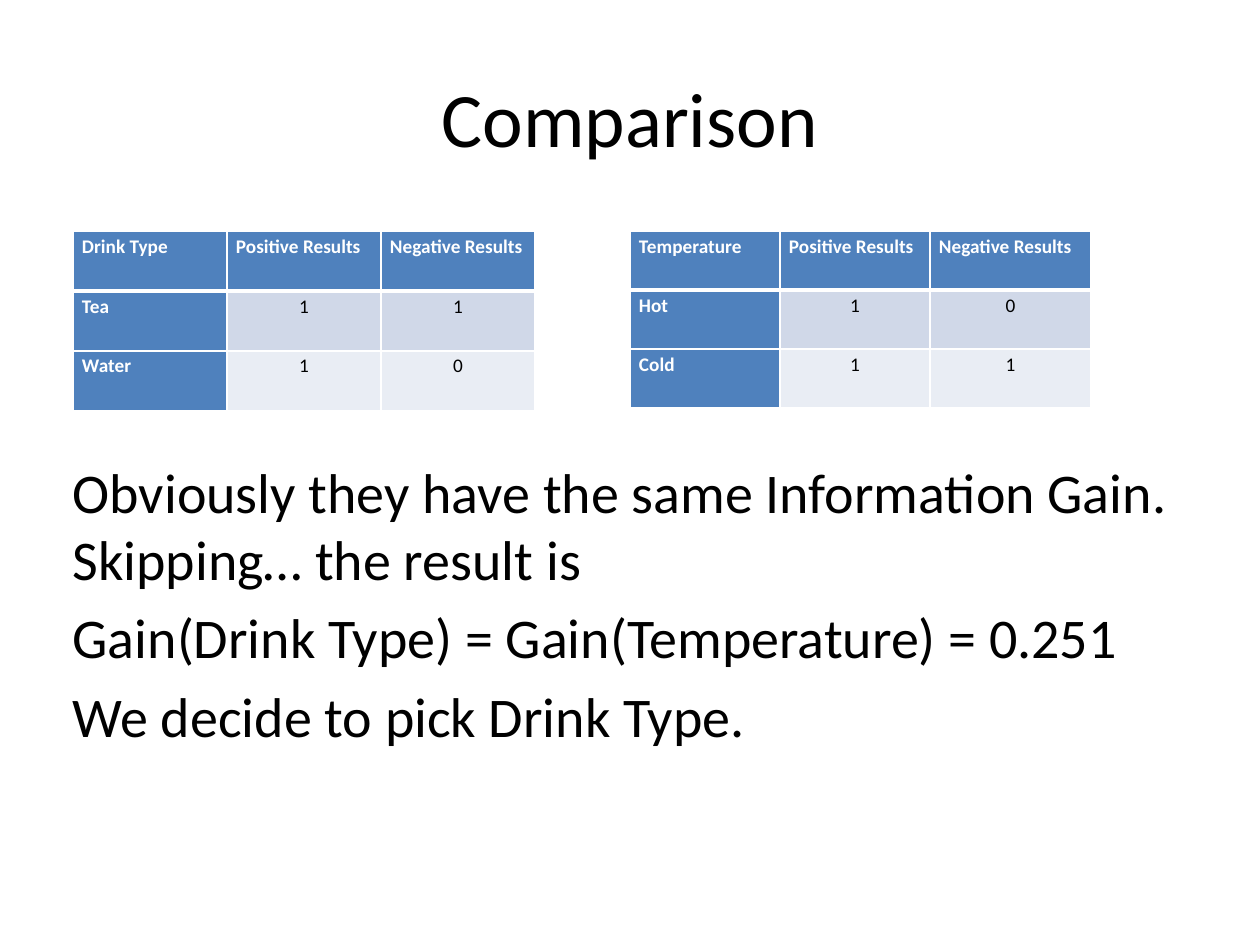
from dataclasses import dataclass

from lxml.etree import SubElement
from pptx import Presentation
from pptx.dml.color import RGBColor
from pptx.enum.text import MSO_ANCHOR, PP_ALIGN
from pptx.oxml import parse_xml
from pptx.oxml.ns import nsdecls, qn
from pptx.util import Emu, Pt

PX_PER_INCH = 126
WHITE, BLACK, BLUE = "FFFFFF", "000000", "4F81BD"
BAND_FILLS = ("D0D8E8", "E9EDF4")


@dataclass(frozen=True)
class ResultTable:
    left: int
    column_widths: tuple[int, ...]
    row_height: int
    attribute: str
    results: tuple[tuple[str, str, str], ...]


TABLES = (
    ResultTable(73, (154, 154, 154), 60, "Drink Type",
                (("Tea", "1", "1"), ("Water", "1", "0"))),
    ResultTable(630, (150, 150, 161), 59, "Temperature",
                (("Hot", "1", "0"), ("Cold", "1", "1"))),
)
TABLE_TOP = 231
BODY_LINES = (
    "Obviously they have the same Information Gain. Skipping… the result is",
    "Gain(Drink Type) = Gain(Temperature) = 0.251",
    "We decide to pick Drink Type.",
)


def px(length: int) -> Emu:
    """Turn pixels into EMU."""
    return Emu(round(length * 914400 / PX_PER_INCH))


def color(value: str) -> RGBColor:
    """Turn a hex string into a colour."""
    return RGBColor.from_string(value)


def write(para, text: str, *, size: int, fill: str = BLACK, bold: bool = False,
          align=PP_ALIGN.LEFT, spacing: float | None = None) -> None:
    """Write formatted text into a paragraph."""
    para.alignment = align
    if spacing is not None:
        para.line_spacing = spacing
    span = para.add_run()
    span.text = text
    span.font.name = "Calibri"
    span.font.size = Pt(size)
    span.font.bold = bold
    span.font.color.rgb = color(fill)


def place(shape, left: int, top: int, width: int, height: int) -> None:
    """Move and size a shape."""
    shape.left, shape.top = px(left), px(top)
    shape.width, shape.height = px(width), px(height)


def set_borders(cell, top: int, bottom: int) -> None:
    """Draw white borders around a cell, with widths in points."""
    properties = cell._tc.get_or_add_tcPr()
    sides = {"L": 1, "R": 1, "T": top, "B": bottom}
    for position, (side, width) in enumerate(sides.items()):
        line = parse_xml(f'<a:ln{side} {nsdecls("a")} w="{Pt(width)}"/>')
        fill = SubElement(line, qn("a:solidFill"))
        SubElement(fill, qn("a:srgbClr"), val=WHITE)
        properties.insert(position, line)


def draw_cell(cell, text: str, row: int, column: int) -> None:
    """Fill and format one cell by its place in the table."""
    heading = row == 0 or column == 0
    cell.margin_left = cell.margin_right = px(9)
    cell.margin_top = cell.margin_bottom = 0
    cell.fill.solid()
    cell.fill.fore_color.rgb = color(BLUE if heading else BAND_FILLS[row - 1])
    set_borders(cell, top=3 if row == 1 else 1, bottom=3 if row == 0 else 1)
    write(cell.text_frame.paragraphs[0], text, size=11, bold=heading,
          fill=WHITE if heading else BLACK, spacing=1.15,
          align=PP_ALIGN.LEFT if heading else PP_ALIGN.CENTER)


def draw_table(page, data: ResultTable) -> None:
    """Draw one table of results."""
    rows = ((data.attribute, "Positive Results", "Negative Results"), *data.results)
    frame = page.shapes.add_table(
        len(rows), len(data.column_widths), px(data.left), px(TABLE_TOP),
        px(sum(data.column_widths)), px(data.row_height * len(rows)))
    table = frame.table
    table.first_col = True
    for column, width in zip(table.columns, data.column_widths):
        column.width = px(width)
    for row, texts in enumerate(rows):
        for column, text in enumerate(texts):
            draw_cell(table.cell(row, column), text, row, column)


def draw_body(box) -> None:
    """Write the body lines without bullets."""
    place(box, 60, 451, 1134, 441)
    frame = box.text_frame
    for index, text in enumerate(BODY_LINES):
        para = frame.add_paragraph() if index else frame.paragraphs[0]
        write(para, text, size=32)
        properties = para._p.get_or_add_pPr()
        properties.set("marL", "0")
        properties.set("indent", "0")
        SubElement(properties, qn("a:buNone"))


def main() -> None:
    """Build and save the slide."""
    deck = Presentation()
    deck.slide_width, deck.slide_height = px(1260), px(945)
    page = deck.slides.add_slide(deck.slide_layouts[1])
    title = page.shapes.title
    place(title, 63, 38, 1134, 158)
    title.text_frame.vertical_anchor = MSO_ANCHOR.MIDDLE
    write(title.text_frame.paragraphs[0], "Comparison", size=44, align=PP_ALIGN.CENTER)
    for data in TABLES:
        draw_table(page, data)
    draw_body(page.placeholders[1])
    deck.save("out.pptx")


if __name__ == "__main__":
    main()
